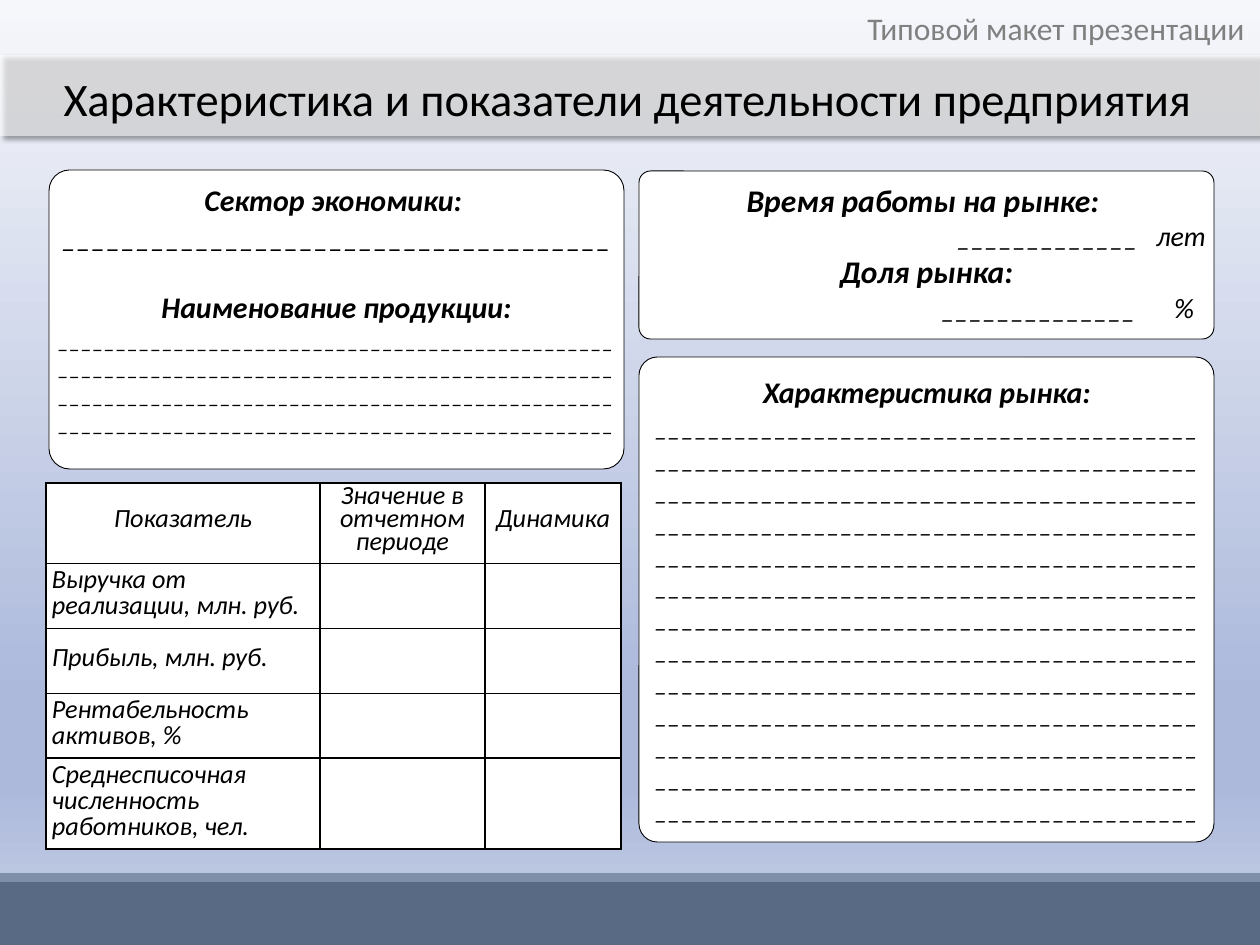
"""Build the slide on the profile and results of an enterprise."""
from copy import deepcopy

from lxml import etree
from pptx import Presentation
from pptx.dml.color import RGBColor
from pptx.enum.shapes import MSO_SHAPE
from pptx.enum.text import MSO_ANCHOR, MSO_AUTO_SIZE, PP_ALIGN
from pptx.oxml import parse_xml
from pptx.oxml.ns import nsdecls, qn
from pptx.util import Pt

PX = 914400 / 126
RECT, ROUND = MSO_SHAPE.RECTANGLE, MSO_SHAPE.ROUNDED_RECTANGLE
LEFT, MID, RIGHT = PP_ALIGN.LEFT, PP_ALIGN.CENTER, PP_ALIGN.RIGHT
TOP, MIDDLE = MSO_ANCHOR.TOP, MSO_ANCHOR.MIDDLE
BLACK = RGBColor(0x00, 0x00, 0x00)
WHITE = RGBColor(0xFF, 0xFF, 0xFF)
GRAY = RGBColor(0x80, 0x80, 0x80)
SLATE = RGBColor(0x59, 0x6A, 0x85)
STRIPE = RGBColor(0x7F, 0x8F, 0xA9)
SKY = [
    (0, RGBColor(0xF6, 0xF7, 0xFB)),
    (0.74, RGBColor(0xAC, 0xB9, 0xDB)),
    (0.83, RGBColor(0xAC, 0xB9, 0xDB)),
    (1, RGBColor(0xC8, 0xD1, 0xE7)),
]


def block(kind, box, fill):
    shape = slide.shapes.add_shape(kind, *[int(n * PX) for n in box])
    shape.shadow.inherit = False
    shape.fill.solid()
    shape.fill.fore_color.rgb = fill
    shape.line.fill.background()
    return shape


def style(para, words, size, align, color=BLACK, bold=False, italic=True):
    para.text = words
    para.alignment = align
    font = para.font
    font.name, font.size = "Calibri", Pt(size)
    font.bold, font.italic = bold, italic
    font.color.rgb = color


deck = Presentation()
deck.slide_width, deck.slide_height = int(1260 * PX), int(945 * PX)
slide = deck.slides.add_slide(deck.slide_layouts[5])

sky = slide.background.fill
sky.gradient()
sky.gradient_angle = 270
stops = slide._element.find(".//" + qn("a:gsLst"))
for _ in range(2):
    stops.append(deepcopy(stops[0]))
for stop, (pos, color) in zip(sky.gradient_stops, SKY):
    stop.color.rgb = color
    stop.position = pos

block(RECT, (0, 882, 1260, 63), SLATE)
block(RECT, (0, 873, 1260, 9), STRIPE)

band = block(RECT, (0, 55, 1260, 81), WHITE)
tint = band._element.spPr.find(".//" + qn("a:srgbClr"))
etree.SubElement(tint, qn("a:alpha")).set("val", "59000")
band._element.spPr.find(qn("a:effectLst")).append(parse_xml(
    f'<a:outerShdw {nsdecls("a")} blurRad="38100" dist="25400" dir="2700000" '
    'algn="tl" rotWithShape="0"><a:srgbClr val="000000">'
    '<a:alpha val="60000"/></a:srgbClr></a:outerShdw>'))

title = slide.shapes.title
title.left, title.top, title.width, title.height = [
    int(n * PX) for n in (0, 64, 1257, 69)]
frame = title.text_frame
frame.auto_size, frame.vertical_anchor = MSO_AUTO_SIZE.NONE, TOP
style(frame.paragraphs[0], "Характеристика и показатели деятельности предприятия",
      26.6, MID, italic=False)
slide.shapes._spTree.append(title._element)

note = slide.shapes.add_textbox(*[int(n * PX) for n in (810, 3, 447, 50)])
note.text_frame.word_wrap = True
style(note.text_frame.paragraphs[0], "Типовой макет презентации", 18, RIGHT, GRAY,
      italic=False)

CARDS = [
    ((49, 170, 575, 299), 0.069, (51, 176, 571, 271), [
        ("Сектор экономики: ", 17.1, MID, True, 0, ()),
        ("_" * 37, 17.1, MID, False, 0, ()),
        ("Наименование продукции:", 17.1, MID, True, 20, ()),
        ("_" * 48 * 4, 13.3, MID, False, 0, ()),
    ]),
    ((639, 357, 575, 485), 0.038, (647, 368, 560, 467), [
        ("Характеристика рынка:", 17.1, MID, True, 0, ()),
        ("_" * 41 * 13, 15.2, MID, False, 0, ()),
    ]),
    ((639, 171, 575, 168), 0.069, (641, 175, 571, 156), [
        ("Время работы на рынке: ", 18, MID, True, 0, ()),
        ("\t" + "_" * 13 + "\tлет", 16, LEFT, False, 0, (491, 559)),
        ("Доля рынка:", 18, MID, True, 0, ()),
        ("\t" + "_" * 14 + "\t%", 16, LEFT, False, 0, (489, 547)),
    ]),
]
for edge, curve, area, lines in CARDS:
    card = block(ROUND, edge, WHITE)
    card.adjustments[0] = curve
    card.line.color.rgb, card.line.width = BLACK, Pt(0.5)
    frame = slide.shapes.add_textbox(*[int(n * PX) for n in area]).text_frame
    frame.word_wrap = True
    frame.margin_left = frame.margin_right = int(6 * PX)
    frame.margin_top = frame.margin_bottom = int(6 * PX)
    for i, (words, size, align, bold, gap, tabs) in enumerate(lines):
        para = frame.add_paragraph() if i else frame.paragraphs[0]
        style(para, words, size, align, bold=bold)
        para.space_before = Pt(gap)
        if tabs:
            props = para._p.get_or_add_pPr()
            stops = etree.SubElement(props, qn("a:tabLst"))
            for pos in tabs:
                tab = etree.SubElement(stops, qn("a:tab"))
                tab.set("pos", str(int(pos * PX)))
                tab.set("algn", "r")
            props.find(qn("a:defRPr")).addprevious(stops)

ROWS = [
    ("Показатель", "Значение в отчетном периоде", "Динамика"),
    ("Выручка от реализации, млн. руб.", "", ""),
    ("Прибыль, млн. руб.", "", ""),
    ("Рентабельность активов, %", "", ""),
    ("Среднесписочная численность работников, чел.", "", ""),
]
WIDE = [274, 165, 136]
HIGH = [80, 65, 65, 65, 87]
grid = slide.shapes.add_table(
    len(ROWS), len(WIDE), *[int(n * PX) for n in (46, 483, sum(WIDE), sum(HIGH))]).table
grid.first_row = grid.horz_banding = False
for col, width in zip(grid.columns, WIDE):
    col.width = int(width * PX)
for r, row in enumerate(ROWS):
    grid.rows[r].height = int(HIGH[r] * PX)
    for c, words in enumerate(row):
        cell = grid.cell(r, c)
        cell.margin_left = cell.margin_right = int(6 * PX)
        cell.margin_top = cell.margin_bottom = int(6 * PX)
        cell.vertical_anchor = MIDDLE if r in (0, 2) else TOP
        para = cell.text_frame.paragraphs[0]
        style(para, words, 15, LEFT if r else MID)
        para.line_spacing = Pt(15 if r else 13)
        props = cell._tc.get_or_add_tcPr()
        for side in ("lnL", "lnR", "lnT", "lnB"):
            props.append(parse_xml(
                f'<a:{side} {nsdecls("a")} w="12700"><a:solidFill>'
                f'<a:srgbClr val="{BLACK}"/></a:solidFill></a:{side}>'))
        cell.fill.solid()
        cell.fill.fore_color.rgb = WHITE

deck.save("out.pptx")
